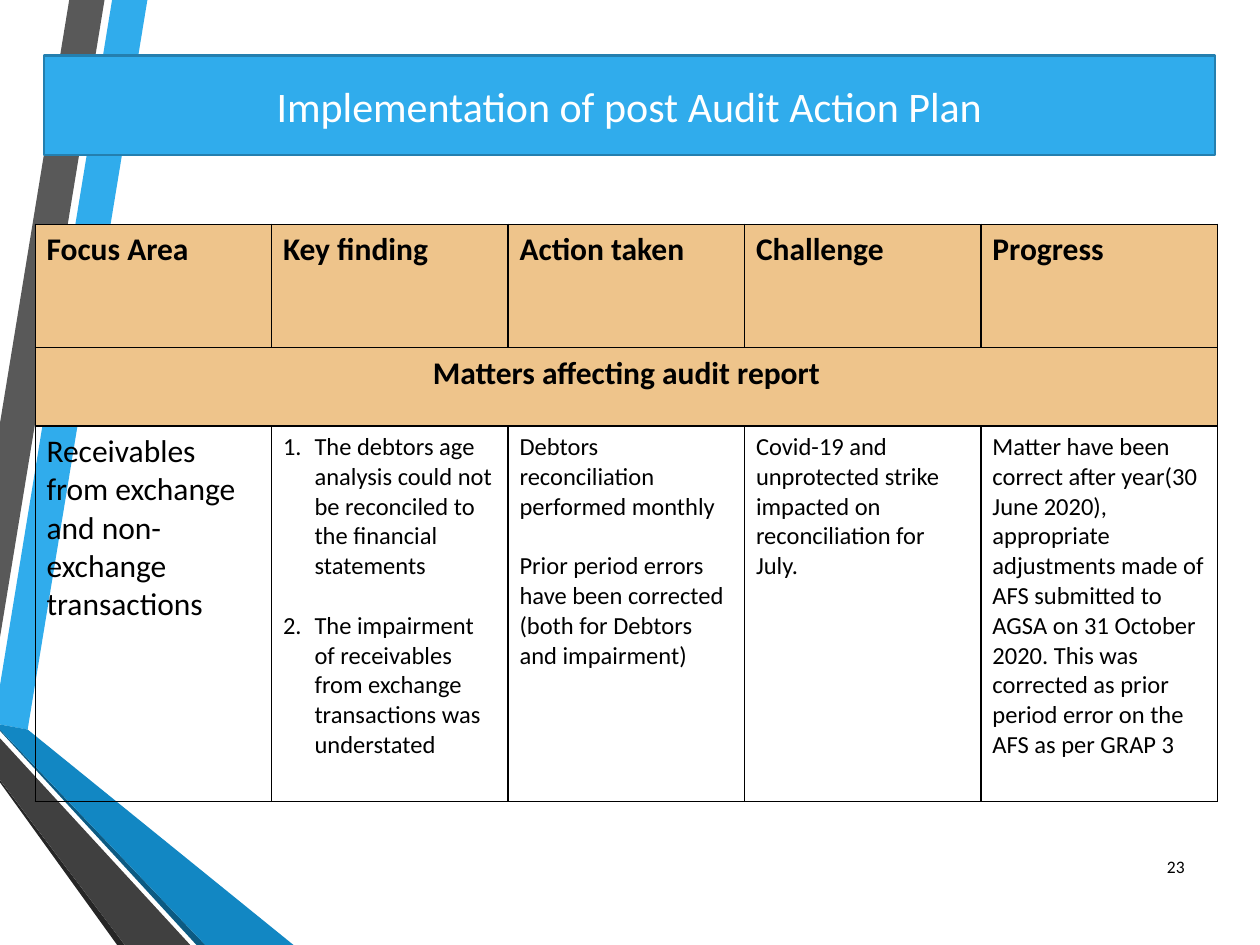
from dataclasses import dataclass

from lxml.etree import SubElement
from pptx import Presentation
from pptx.dml.color import RGBColor
from pptx.enum.shapes import MSO_SHAPE
from pptx.enum.text import MSO_ANCHOR, PP_ALIGN as Align
from pptx.oxml import parse_xml
from pptx.oxml.ns import nsdecls, qn
from pptx.util import Inches, Pt

FONT = "Calibri"
BLACK, WHITE, BLUE, TAN = "000000", "FFFFFF", "30ACEC", "EEC48B"


@dataclass(frozen=True)
class Ribbon:
    color: str
    points: tuple[tuple[float, float], ...]


@dataclass(frozen=True)
class CellText:
    paragraphs: tuple[str, ...]
    size: int = 14
    bold: bool = False
    align: Align = Align.LEFT
    fill: str | None = None
    numbered: bool = False


RIBBONS = (
    Ribbon(BLUE, ((0, 5.44), (0, 5.75), (0.22, 5.79), (1.17, 0), (0.89, 0))),
    Ribbon("595959", ((0.83, 0), (0.55, 0), (0, 3.36), (0, 5.06))),
    Ribbon("262626", ((0, 6.19), (0, 6.21), (0.93, 7.5), (0.99, 7.5))),
    Ribbon("0C5A82", ((0, 5.79), (0, 5.8), (1.56, 7.5), (1.63, 7.5))),
    Ribbon("1287C3", ((0, 5.79), (1.63, 7.5), (2.33, 7.5), (0.22, 5.79), (0, 5.75))),
    Ribbon("404040", ((0, 6.19), (0.99, 7.5), (1.51, 7.5), (0, 5.86))),
)

HEADINGS = ("Focus Area", "Key finding", "Action taken", "Challenge", "Progress")
SECTION = CellText(("Matters affecting audit report",), 18, True, Align.CENTER, TAN)
FINDING = (
    CellText(("Receivables from exchange and non-exchange transactions",), 18),
    CellText((
        "The debtors age analysis could not be reconciled to the financial statements",
        "The impairment of receivables from exchange transactions was understated",
    ), numbered=True),
    CellText((
        "Debtors reconciliation performed monthly",
        "Prior period errors have been corrected (both for Debtors and impairment)",
    )),
    CellText(("Covid-19 and unprotected strike impacted on reconciliation for July.",)),
    CellText((
        "Matter have been correct after year(30 June 2020), appropriate adjustments "
        "made of AFS submitted to AGSA on 31 October 2020. This was corrected as "
        "prior period error on the AFS as per GRAP 3",
    )),
)
ROW_HEIGHTS = (0.98, 0.62, 2.98)
COLUMN_WIDTH = 1.877


def rgb(color: str) -> RGBColor:
    return RGBColor.from_string(color)


def add_span(para, text: str, size: int, color: str = BLACK, bold: bool = False) -> None:
    span = para.add_run()
    span.text = text
    span.font.name = FONT
    span.font.size = Pt(size)
    span.font.bold = bold
    span.font.color.rgb = rgb(color)


def draw_ribbon(slide, ribbon: Ribbon) -> None:
    start, *rest = [(Inches(x), Inches(y)) for x, y in ribbon.points]
    builder = slide.shapes.build_freeform(*start)
    builder.add_line_segments(rest, close=True)
    shape = builder.convert_to_shape()
    shape.shadow.inherit = False
    shape.fill.solid()
    shape.fill.fore_color.rgb = rgb(ribbon.color)
    shape.line.fill.background()


def draw_title(slide, text: str) -> None:
    box = slide.shapes.add_shape(
        MSO_SHAPE.RECTANGLE, Inches(0.35), Inches(0.44), Inches(9.29), Inches(0.79))
    box.shadow.inherit = False
    box.fill.solid()
    box.fill.fore_color.rgb = rgb(BLUE)
    box.line.color.rgb = rgb("247FAF")
    box.line.width = Pt(1.25)
    box.text_frame.vertical_anchor = MSO_ANCHOR.MIDDLE
    para = box.text_frame.paragraphs[0]
    para.alignment = Align.CENTER
    add_span(para, text, 24, WHITE)


def number_paragraph(para) -> None:
    """Give the paragraph a hanging indent and an automatic number."""
    properties = para._p.get_or_add_pPr()
    properties.set("marL", str(Inches(0.25)))
    properties.set("indent", str(-Inches(0.25)))
    SubElement(properties, qn("a:buFont"), typeface="+mj-lt")
    SubElement(properties, qn("a:buAutoNum"), type="arabicPeriod")


def style_cell(cell, fill: str | None) -> None:
    """Set insets, fill and a thin black border on every side."""
    cell.margin_left = cell.margin_right = Inches(0.09)
    cell.margin_top = cell.margin_bottom = Inches(0.05)
    if fill:
        cell.fill.solid()
        cell.fill.fore_color.rgb = rgb(fill)
    else:
        cell.fill.background()
    properties = cell._tc.get_or_add_tcPr()
    for index, side in enumerate(("lnL", "lnR", "lnT", "lnB")):
        properties.insert(index, parse_xml(
            f'<a:{side} {nsdecls("a")} w="{Pt(1)}"><a:solidFill>'
            f'<a:srgbClr val="{BLACK}"/></a:solidFill></a:{side}>'))


def write_cell(cell, content: CellText) -> None:
    frame = cell.text_frame
    for index, text in enumerate(content.paragraphs):
        para = frame.add_paragraph() if index else frame.paragraphs[0]
        para.alignment = content.align
        if index:
            para.space_before = Pt(17)
        if content.numbered:
            number_paragraph(para)
        add_span(para, text, content.size, bold=content.bold)


def draw_table(slide) -> None:
    columns = len(HEADINGS)
    table = slide.shapes.add_table(
        len(ROW_HEIGHTS), columns, Inches(0.28), Inches(1.78),
        Inches(COLUMN_WIDTH * columns), Inches(sum(ROW_HEIGHTS))).table
    table.first_row = table.horz_banding = False
    for column in table.columns:
        column.width = Inches(COLUMN_WIDTH)
    for row, height in zip(table.rows, ROW_HEIGHTS):
        row.height = Inches(height)

    header = [CellText((text,), 18, True, fill=TAN) for text in HEADINGS]
    for row, contents in zip(table.rows, (header, [SECTION] * columns, FINDING)):
        for cell, content in zip(row.cells, contents):
            style_cell(cell, content.fill)
            if content is not SECTION:
                write_cell(cell, content)
    section = table.cell(1, 0)
    section.merge(table.cell(1, columns - 1))
    write_cell(section, SECTION)


def draw_page_number(slide, number: str) -> None:
    box = slide.shapes.add_textbox(Inches(9.03), Inches(6.68), Inches(0.47), Inches(0.4))
    box.text_frame.word_wrap = True
    box.text_frame.vertical_anchor = MSO_ANCHOR.MIDDLE
    para = box.text_frame.paragraphs[0]
    para.alignment = Align.RIGHT
    add_span(para, number, 10)


def main() -> None:
    deck = Presentation()
    deck.slide_width, deck.slide_height = Inches(10), Inches(7.5)
    slide = deck.slides.add_slide(deck.slide_layouts[6])
    for ribbon in RIBBONS:
        draw_ribbon(slide, ribbon)
    draw_title(slide, "Implementation of post Audit Action Plan")
    draw_table(slide)
    draw_page_number(slide, "23")
    deck.save("out.pptx")


if __name__ == "__main__":
    main()
